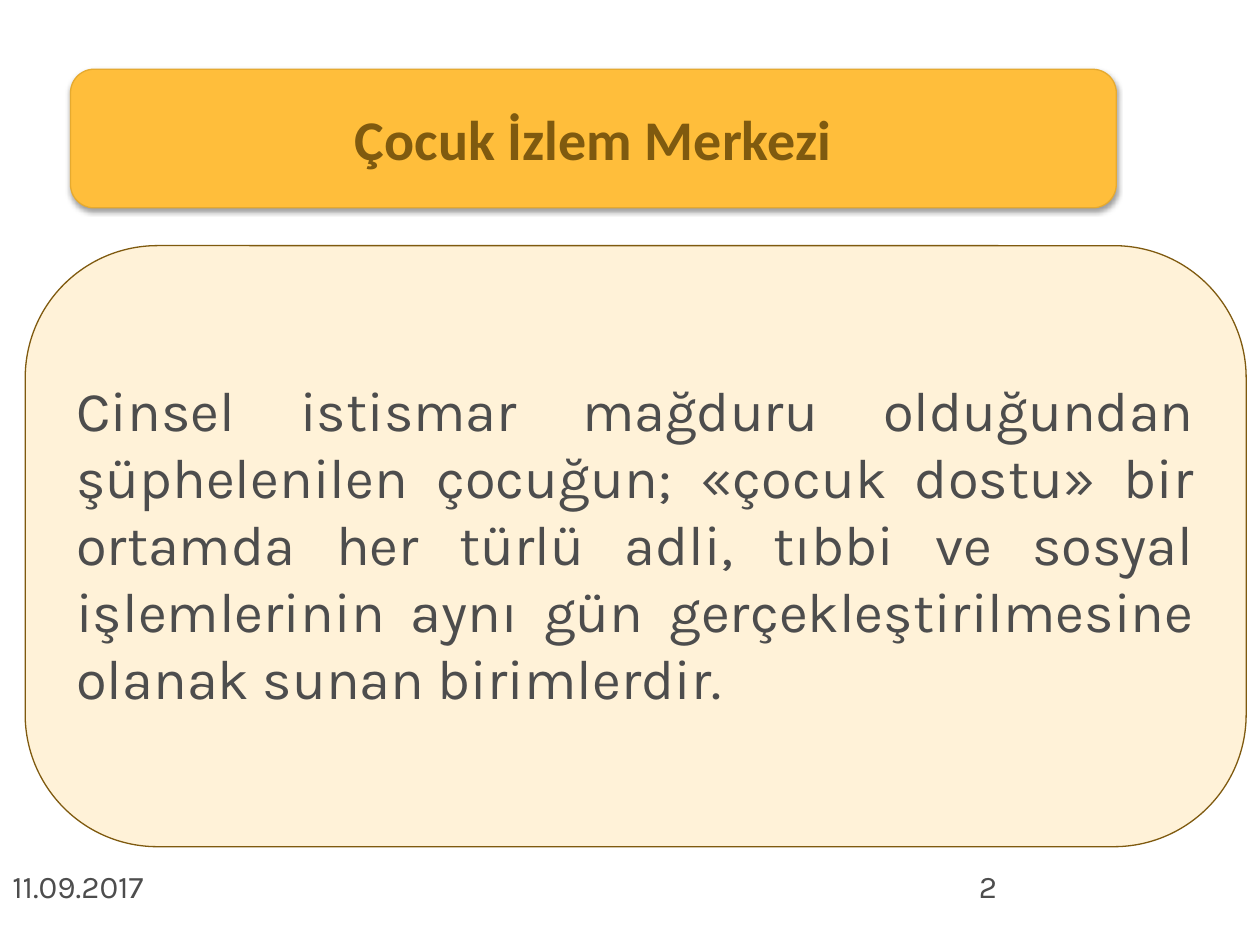
from lxml import etree
from pptx import Presentation
from pptx.dml.color import RGBColor
from pptx.enum.shapes import MSO_SHAPE
from pptx.enum.text import MSO_ANCHOR, PP_ALIGN
from pptx.oxml.ns import qn
from pptx.util import Inches, Pt

ROUND = MSO_SHAPE.ROUNDED_RECTANGLE
TOP, MIDDLE = MSO_ANCHOR.TOP, MSO_ANCHOR.MIDDLE
LEFT, CENTER, JUSTIFY = PP_ALIGN.LEFT, PP_ALIGN.CENTER, PP_ALIGN.JUSTIFY

WHITE = RGBColor(0xFF, 0xFF, 0xFF)
GRAY = RGBColor(0x4D, 0x4D, 0x4D)
BROWN = RGBColor(0x7F, 0x5A, 0x0F)
CREAM = RGBColor(0xFF, 0xF2, 0xD8)
AMBER = RGBColor(0xFF, 0xBE, 0x3B)
GOLD = RGBColor(0xE6, 0xAA, 0x2F)

TITLE = {"name": "Calibri", "size": Pt(32), "bold": True}
BODY = {"name": "Karla", "size": Pt(32), "bold": False}
FOOT = {"name": "Karla", "size": Pt(18), "bold": False}

ABOUT = (
    "Cinsel istismar mağduru olduğundan şüphelenilen çocuğun; «çocuk dostu» "
    "bir ortamda her türlü adli, tıbbi ve sosyal işlemlerinin aynı gün "
    "gerçekleştirilmesine olanak sunan birimlerdir."
)


def write(shape, text, style, color, align=LEFT, anchor=TOP):
    frame = shape.text_frame
    frame.word_wrap = True
    frame.vertical_anchor = anchor
    para = frame.paragraphs[0]
    para.alignment = align
    run = para.add_run()
    run.text = text
    for key, value in style.items():
        setattr(run.font, key, value)
    run.font.color.rgb = color


def add_panel(slide, box, fill, edge, bend):
    panel = slide.shapes.add_shape(ROUND, *map(Inches, box))
    panel.adjustments[0] = bend
    panel.shadow.inherit = False
    panel.fill.solid()
    panel.fill.fore_color.rgb = fill
    panel.line.color.rgb = edge
    panel.line.width = Pt(0.75)
    return panel


def add_shade(shape):
    effects = shape._element.spPr.find(qn("a:effectLst"))
    shade = etree.SubElement(
        effects, qn("a:outerShdw"), blurRad=str(Pt(3.1)), dist=str(Pt(1.6)),
        dir="5400000", rotWithShape="0")
    color = etree.SubElement(shade, qn("a:srgbClr"), val="000000")
    etree.SubElement(color, qn("a:alpha"), val="38000")


def add_foot(slide, left, text):
    box = slide.shapes.add_textbox(
        Inches(left), Inches(6.83), Inches(2.33), Inches(0.52))
    write(box, text, FOOT, GRAY)


def main():
    deck = Presentation()
    deck.slide_width, deck.slide_height = Inches(10), Inches(7.5)
    slide = deck.slides.add_slide(deck.slide_layouts[6])
    slide.background.fill.solid()
    slide.background.fill.fore_color.rgb = WHITE

    body = add_panel(slide, (0.2, 1.95, 9.69, 4.77), CREAM, BROWN, 0.22)
    write(body, ABOUT, BODY, GRAY, JUSTIFY)
    body.text_frame.margin_top = Inches(0.72)

    add_foot(slide, 0, "11.09.2017")
    add_foot(slide, 7.67, "2")

    title = add_panel(slide, (0.56, 0.55, 8.3, 1.1), AMBER, GOLD, 0.17)
    add_shade(title)
    write(title, "Çocuk İzlem Merkezi", TITLE, BROWN, CENTER, MIDDLE)

    deck.save("out.pptx")


if __name__ == "__main__":
    main()
